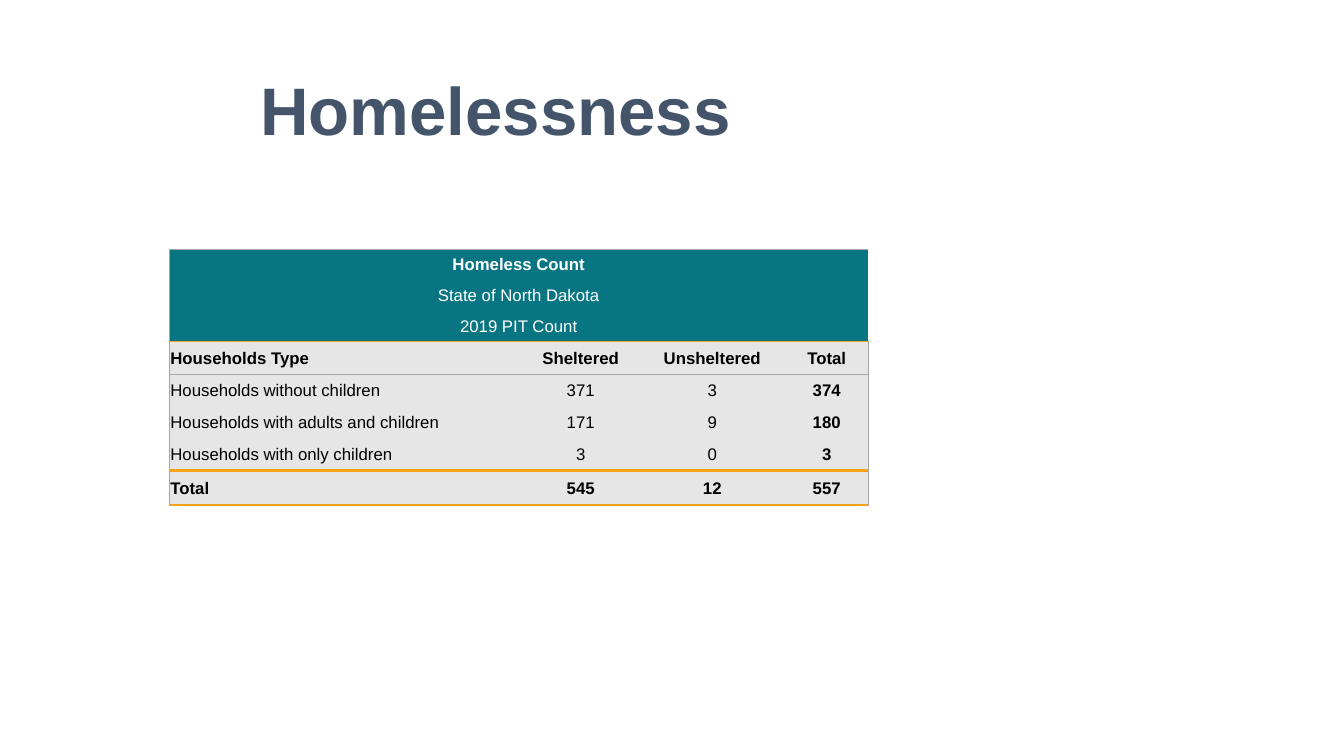
import dataclasses

import pptx
import pptx.dml.color
import pptx.enum.text
import pptx.oxml.ns
import pptx.util
from lxml import etree

Inches = pptx.util.Inches
Align = pptx.enum.text.PP_ALIGN
Anchor = pptx.enum.text.MSO_ANCHOR


@dataclasses.dataclass(frozen=True)
class Theme:
    font: str = "Arial"
    title_size: int = 48
    table_size: int = 12
    title: str = "44546A"
    band: str = "087582"
    band_text: str = "FFFFFF"
    body: str = "E7E6E6"
    body_text: str = "000000"
    accent: str = "FAA21A"
    rule: str = "A6A6A6"


CAPTIONS = ["Homeless Count", "State of North Dakota", "2019 PIT Count"]
COUNTS = [
    ["Households Type", "Sheltered", "Unsheltered", "Total"],
    ["Households without children", "371", "3", "374"],
    ["Households with adults and children", "171", "9", "180"],
    ["Households with only children", "3", "0", "3"],
    ["Total", "545", "12", "557"],
]
COLUMN_WIDTHS = [3.5, 1.16, 1.45, 0.82]
ROW_HEIGHTS = [0.31, 0.3, 0.31, 0.33, 0.31, 0.31, 0.33, 0.34]


class SlideBuilder:
    """Hold the theme and current slide, and add styled elements to it."""

    def __init__(self, slide, theme):
        self.slide = slide
        self.theme = theme

    def format_text(self, frame, size, color, bold, alignment):
        frame.vertical_anchor = Anchor.MIDDLE
        for paragraph in frame.paragraphs:
            paragraph.alignment = alignment
            for run in paragraph.runs:
                run.font.name = self.theme.font
                run.font.size = pptx.util.Pt(size)
                run.font.bold = bold
                run.font.color.rgb = pptx.dml.color.RGBColor.from_string(color)

    def add_title(self, text, left, top, width, height):
        title = self.slide.shapes.title
        title.left, title.top = Inches(left), Inches(top)
        title.width, title.height = Inches(width), Inches(height)
        title.text_frame.text = text
        self.format_text(title.text_frame, self.theme.title_size, self.theme.title, True, Align.CENTER)

    def set_border(self, cell, side, border):
        properties = cell._tc.get_or_add_tcPr()
        line = etree.SubElement(properties, pptx.oxml.ns.qn(f"a:ln{side}"))
        if border is None:
            etree.SubElement(line, pptx.oxml.ns.qn("a:noFill"))
            return
        color, width = border
        line.set("w", str(pptx.util.Pt(width)))
        fill = etree.SubElement(line, pptx.oxml.ns.qn("a:solidFill"))
        etree.SubElement(fill, pptx.oxml.ns.qn("a:srgbClr")).set("val", color)

    def format_cell(self, cell, text, fill, color, bold, alignment, borders):
        cell.text_frame.text = text
        cell.margin_left = cell.margin_right = cell.margin_top = Inches(0.01)
        cell.margin_bottom = 0
        self.format_text(cell.text_frame, self.theme.table_size, color, bold, alignment)
        cell.vertical_anchor = Anchor.MIDDLE
        for side, border in zip("LRTB", borders):
            self.set_border(cell, side, border)
        cell.fill.solid()
        cell.fill.fore_color.rgb = pptx.dml.color.RGBColor.from_string(fill)

    def add_count_table(self, left, top, captions, counts, widths, heights):
        theme = self.theme
        rows = [[caption] + [""] * (len(widths) - 1) for caption in captions] + counts
        header, last_row, last_column = len(captions), len(rows) - 1, len(widths) - 1
        table = self.slide.shapes.add_table(
            len(rows), len(widths), Inches(left), Inches(top),
            Inches(sum(widths)), Inches(sum(heights)),
        ).table
        table.first_row = table.horz_banding = False
        for column, width in zip(table.columns, widths):
            column.width = Inches(width)
        for row, height in zip(table.rows, heights):
            row.height = Inches(height)

        thin = (theme.rule, 0.75)
        rules = {
            0: thin,
            header: (theme.accent, 1),
            header + 1: thin,
            last_row: (theme.accent, 2),
            last_row + 1: (theme.accent, 1),
        }
        for i, row in enumerate(rows):
            in_band = i < header
            for j, text in enumerate(row):
                borders = (
                    thin if j == 0 else None,
                    thin if j == last_column else None,
                    rules.get(i),
                    rules.get(i + 1),
                )
                bold = i in (0, header, last_row) or j == last_column
                alignment = Align.CENTER if in_band or j else Align.LEFT
                fill = theme.band if in_band else theme.body
                color = theme.band_text if in_band else theme.body_text
                self.format_cell(table.cell(i, j), text, fill, color, bold, alignment, borders)
            if in_band:
                table.cell(i, 0).merge(table.cell(i, last_column))


def main():
    presentation = pptx.Presentation()
    presentation.slide_width = Inches(13.33)
    presentation.slide_height = Inches(7.5)
    slide = presentation.slides.add_slide(presentation.slide_layouts[5])
    builder = SlideBuilder(slide, Theme())
    builder.add_title("Homelessness", 0.28, 0.58, 9.27, 1)
    builder.add_count_table(1.68, 2.47, CAPTIONS, COUNTS, COLUMN_WIDTHS, ROW_HEIGHTS)
    presentation.save("out.pptx")


if __name__ == "__main__":
    main()
